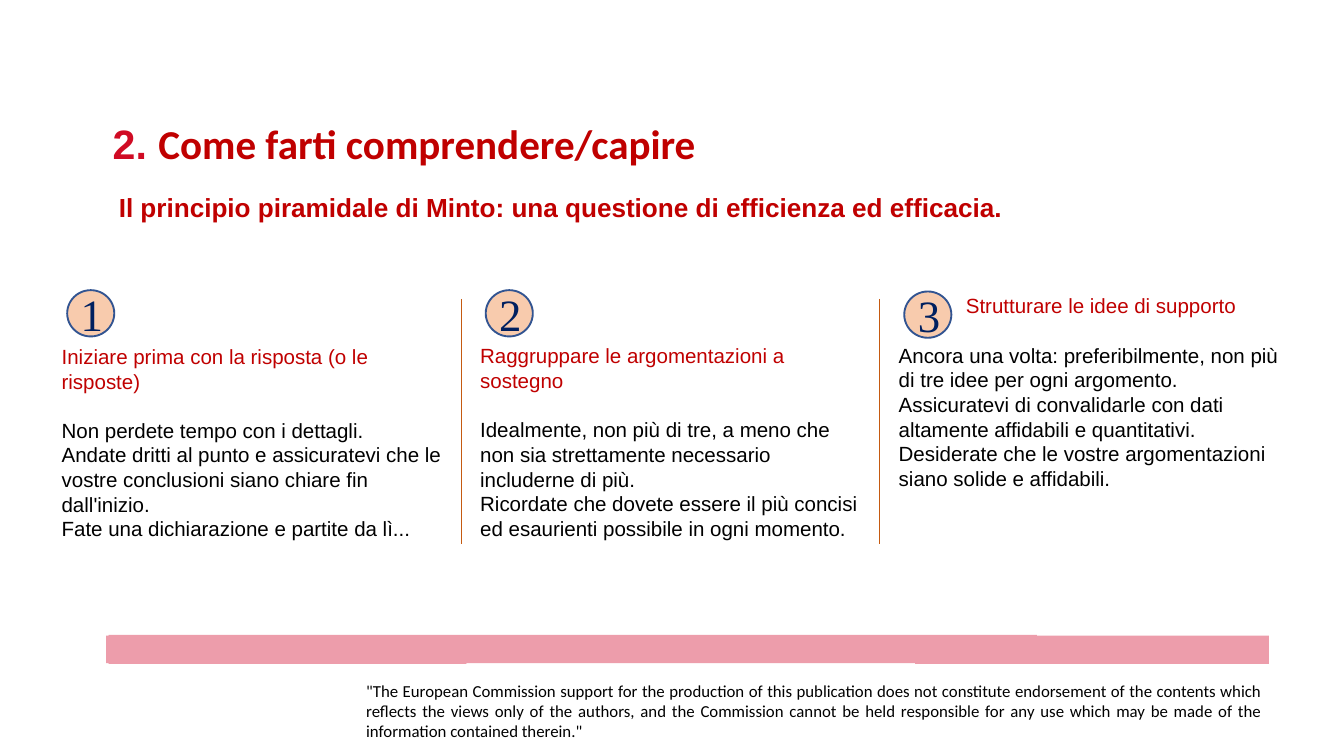
from dataclasses import dataclass

from lxml.etree import SubElement
from pptx import Presentation
from pptx.dml.color import RGBColor
from pptx.enum.shapes import MSO_CONNECTOR, MSO_SHAPE
from pptx.enum.text import MSO_ANCHOR, PP_ALIGN
from pptx.oxml.ns import qn
from pptx.slide import Slide
from pptx.text.text import TextFrame, _Paragraph
from pptx.util import Cm, Length, Pt


@dataclass(frozen=True)
class Theme:
    red: str = "C00000"
    crimson: str = "D00B24"
    black: str = "000000"
    navy: str = "002060"
    peach: str = "F8CBAD"
    blue: str = "325491"
    orange: str = "C55A11"
    pink: str = "ED9DAB"
    sans: str = "Arial"
    humanist: str = "Calibri"
    serif: str = "Times New Roman"
    title: int = 44
    subtitle: int = 28
    body: int = 22
    badge: int = 48
    notice: int = 18


@dataclass(frozen=True)
class Step:
    heading: str
    sentences: tuple[str, ...]
    column_top: float
    badge_top: float
    heading_beside_badge: bool = False


THEME = Theme()
COLUMN_LEFT, COLUMN_PITCH, COLUMN_WIDTH = 2.08, 15.82, 14.99
BADGE_LEFT, BADGE_WIDTH, BADGE_HEIGHT = 2.54, 1.78, 1.75
DIVIDER_LEFT, DIVIDER_TOP, DIVIDER_BOTTOM = 17.42, 11.3, 20.57
BODY_LINE = 0.93  # height of one line of body text, in cm

STEPS = (
    Step(
        "Iniziare prima con la risposta (o le risposte)",
        (
            "Non perdete tempo con i dettagli.",
            "Andate dritti al punto e assicuratevi che le vostre conclusioni "
            "siano chiare fin dall'inizio.",
            "Fate una dichiarazione e partite da lì...",
        ),
        11.02, 10.97,
    ),
    Step(
        "Raggruppare le argomentazioni a sostegno",
        (
            "Idealmente, non più di tre, a meno che non sia strettamente "
            "necessario includerne di più.",
            "Ricordate che dovete essere il più concisi ed esaurienti "
            "possibile in ogni momento.",
        ),
        11.0, 10.97,
    ),
    Step(
        "Strutturare le idee di supporto",
        (
            "Ancora una volta: preferibilmente, non più di tre idee per ogni argomento.",
            "Assicuratevi di convalidarle con dati altamente affidabili e quantitativi.",
            "Desiderate che le vostre argomentazioni siano solide e affidabili.",
        ),
        10.97, 11.02, heading_beside_badge=True,
    ),
)

BAND_OUTLINE = (
    (47.96, 24.03), (39.19, 24.03), (39.19, 24.0), (4.11, 24.0), (4.11, 24.03),
    (4.01, 24.03), (4.01, 25.07), (4.11, 25.07), (4.11, 25.1), (17.63, 25.1),
    (17.63, 25.07), (34.59, 25.07), (34.59, 25.1), (47.96, 25.1),
)

NOTICE = (
    '"The European Commission support for the production of this publication does '
    "not constitute endorsement of the contents which reflects the views only of the "
    "authors, and the Commission cannot be held responsible for any use which may be "
    'made of the information contained therein."'
)


def add_run(paragraph: _Paragraph, text: str, size: int, color: str,
            font: str = THEME.sans, bold: bool = False) -> None:
    run = paragraph.add_run()
    run.text = text
    run.font.size = Pt(size)
    run.font.name = font
    run.font.bold = bold
    run.font.color.rgb = RGBColor.from_string(color)


def add_text_box(slide: Slide, left: float, top: float,
                 width: float, height: float) -> TextFrame:
    frame = slide.shapes.add_textbox(Cm(left), Cm(top), Cm(width), Cm(height)).text_frame
    frame.word_wrap = True
    return frame


def add_band(slide: Slide) -> None:
    points = [(Cm(x), Cm(y)) for x, y in BAND_OUTLINE]
    builder = slide.shapes.build_freeform(*points[0], scale=1.0)
    builder.add_line_segments(points[1:], close=True)
    band = builder.convert_to_shape()
    band.shadow.inherit = False
    band.fill.solid()
    band.fill.fore_color.rgb = RGBColor.from_string(THEME.pink)
    band.line.fill.background()


def add_notice(slide: Slide) -> None:
    frame = add_text_box(slide, 13.84, 25.78, 33.86, 1.93)
    frame.margin_left = frame.margin_right = frame.margin_top = frame.margin_bottom = Cm(0)
    paragraph = frame.paragraphs[0]
    paragraph.alignment = PP_ALIGN.JUSTIFY
    paragraph.line_spacing = 0.98
    add_run(paragraph, NOTICE, THEME.notice, THEME.black, THEME.humanist)


def add_titles(slide: Slide) -> None:
    title = add_text_box(slide, 4.01, 4.37, 34.19, 2.13).paragraphs[0]
    add_run(title, "2. ", THEME.title, THEME.crimson, bold=True)
    add_run(title, "Come farti comprendere/capire", THEME.title, THEME.red,
            THEME.humanist, bold=True)
    subtitle = add_text_box(slide, 4.24, 7.11, 36.63, 1.4).paragraphs[0]
    add_run(subtitle, "Il principio piramidale di Minto: una questione di efficienza "
            "ed efficacia.", THEME.subtitle, THEME.red, bold=True)


def add_step_text(slide: Slide, step: Step, offset: float) -> None:
    drop = 0 if step.heading_beside_badge else 2 * BODY_LINE
    frame = add_text_box(slide, COLUMN_LEFT + offset, step.column_top + drop,
                         COLUMN_WIDTH, 9.65 - drop)
    heading = frame.paragraphs[0]
    if step.heading_beside_badge:
        indent: Length = Cm(2.54)
        properties = heading._p.get_or_add_pPr()
        properties.set("marL", str(indent))
        properties.set("indent", "0")
    add_run(heading, step.heading, THEME.body, THEME.red)
    for index, sentence in enumerate(step.sentences):
        paragraph = frame.add_paragraph()
        if index == 0:
            paragraph.space_before = Cm(BODY_LINE)
        add_run(paragraph, sentence, THEME.body, THEME.black)


def add_badge(slide: Slide, number: int, top: float, offset: float) -> None:
    badge = slide.shapes.add_shape(MSO_SHAPE.OVAL, Cm(BADGE_LEFT + offset), Cm(top),
                                   Cm(BADGE_WIDTH), Cm(BADGE_HEIGHT))
    badge.shadow.inherit = False
    badge.fill.solid()
    badge.fill.fore_color.rgb = RGBColor.from_string(THEME.peach)
    badge.line.color.rgb = RGBColor.from_string(THEME.blue)
    badge.line.width = Pt(2)
    badge.text_frame.vertical_anchor = MSO_ANCHOR.MIDDLE
    paragraph = badge.text_frame.paragraphs[0]
    paragraph.alignment = PP_ALIGN.CENTER
    add_run(paragraph, str(number), THEME.badge, THEME.navy, THEME.serif)


def add_divider(slide: Slide, offset: float) -> None:
    x = Cm(DIVIDER_LEFT + offset)
    divider = slide.shapes.add_connector(MSO_CONNECTOR.STRAIGHT, x, Cm(DIVIDER_TOP),
                                         x, Cm(DIVIDER_BOTTOM))
    divider.line.color.rgb = RGBColor.from_string(THEME.orange)
    divider.line.width = Pt(0.75)
    SubElement(divider._element.spPr, qn("a:effectLst"))


def main() -> None:
    presentation = Presentation()
    presentation.slide_width, presentation.slide_height = Cm(50.8), Cm(28.58)
    slide = presentation.slides.add_slide(presentation.slide_layouts[6])

    # Footer and headings
    add_band(slide)
    add_notice(slide)
    add_titles(slide)

    # Three steps with dividers between them
    for index, step in enumerate(STEPS):
        offset = index * COLUMN_PITCH
        add_step_text(slide, step, offset)
        add_badge(slide, index + 1, step.badge_top, offset)
        if index < len(STEPS) - 1:
            add_divider(slide, offset)

    presentation.save("out.pptx")


if __name__ == "__main__":
    main()
